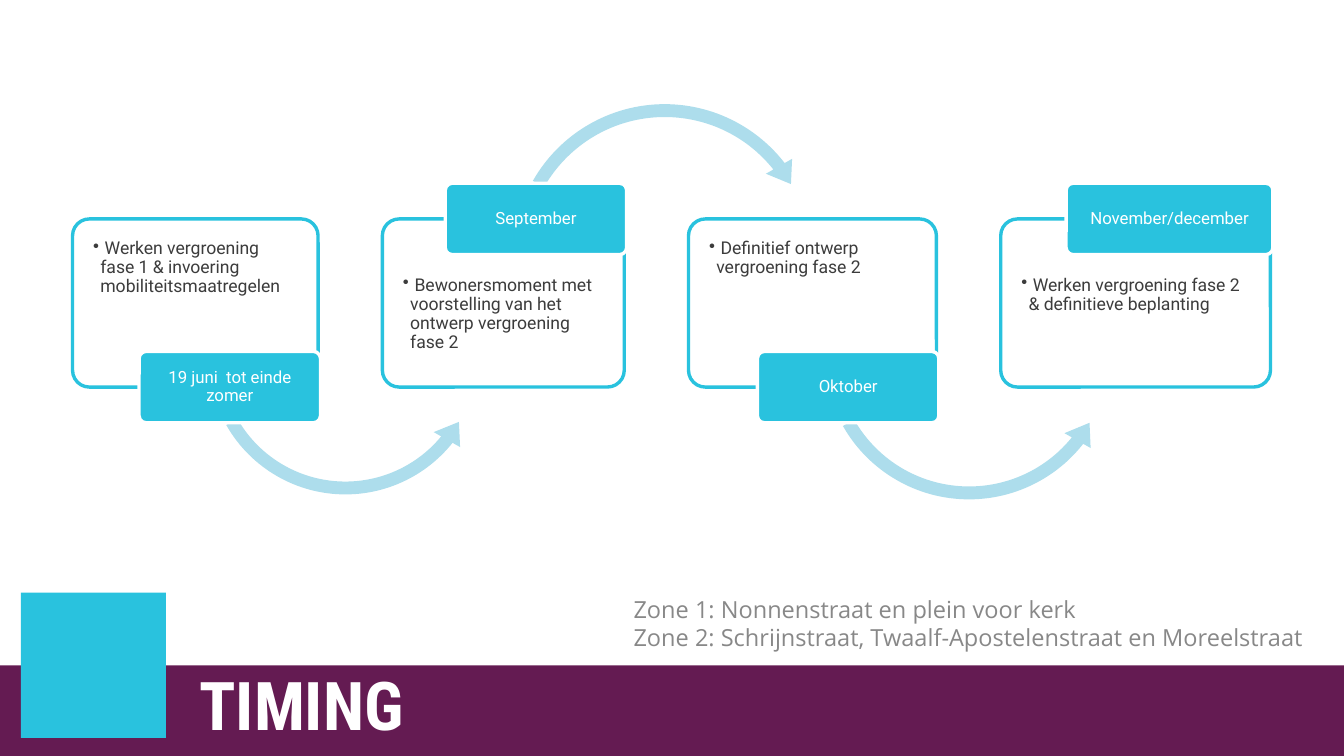
from dataclasses import dataclass
from typing import Optional

from lxml.etree import SubElement
from pptx import Presentation
from pptx.dml.color import RGBColor
from pptx.enum.shapes import MSO_SHAPE
from pptx.enum.text import MSO_ANCHOR, PP_ALIGN
from pptx.oxml.ns import qn
from pptx.shapes.autoshape import Shape
from pptx.text.text import TextFrame
from pptx.util import Emu, Inches, Pt

CYAN = RGBColor(0x29, 0xC2, 0xDE)
PALE_CYAN = RGBColor(0xAD, 0xDD, 0xEC)
PURPLE = RGBColor(0x64, 0x1B, 0x52)
WHITE = RGBColor(0xFF, 0xFF, 0xFF)
DARK_GREY = RGBColor(0x3C, 0x3C, 0x3C)
MID_GREY = RGBColor(0x88, 0x88, 0x88)

deck = Presentation()
deck.slide_width, deck.slide_height = Inches(11.11), Inches(6.25)
slide = deck.slides.add_slide(deck.slide_layouts[6])

# Grid: 100 columns by 100 rows
COLUMN = deck.slide_width / 100
ROW = deck.slide_height / 100
FIRST_CARD, CARD_GAP = 5.4, 4.78
CARD_TOP, CARD_HEIGHT = 28.96, 22.24
MONTH_HEIGHT, MONTH_OVERHANG = 9.44, 0.18
BAND_TOP, BAND_HEIGHT = 88, 12

BODY_FONT = {"name": "Roboto", "size": Pt(10.5)}
MONTH_FONT = {"name": "Roboto", "size": Pt(10)}
TITLE_FONT = {"name": "Roboto Condensed", "size": Pt(40), "bold": True}
ZONE_FONT = {"name": "Open Sans", "size": Pt(14)}


@dataclass
class Arrow:
    """Curved arrow, centred on a grid point; size in columns."""
    kind: MSO_SHAPE
    x: float
    y: float
    size: float
    bend: tuple[float, ...]


@dataclass
class Step:
    month: str
    task: str
    width: float
    month_width: float
    month_on_top: bool
    arrow: Optional[Arrow] = None


STEPS = [
    Step("19 juni  tot einde zomer",
         " Werken vergroening fase 1 & invoering mobiliteitsmaatregelen",
         18.27, 13.5, False,
         Arrow(MSO_SHAPE.LEFT_CIRCULAR_ARROW, 25.7, 47.28, 21.69,
               (0.044, 5.64, 23.4, 90.25, 0.052))),
    Step("September",
         " Bewonersmoment met voorstelling van het ontwerp vergroening fase 2",
         18, 13.5, True,
         Arrow(MSO_SHAPE.CIRCULAR_ARROW, 49.46, 33.84, 23.85,
               (0.04, 5.08, 193.17, 125.76, 0.047))),
    Step("Oktober", " Definitief ontwerp vergroening fase 2",
         18.45, 13.5, False,
         Arrow(MSO_SHAPE.LEFT_CIRCULAR_ARROW, 72.1, 46.88, 22.86,
               (0.042, 5.33, 23.08, 90.25, 0.049))),
    Step("November/december",
         " Werken vergroening fase 2 & definitieve beplanting",
         20.07, 15.39, True),
]


def grid_box(left: float, top: float, width: float, height: float) -> list[Emu]:
    return [Emu(round(length)) for length in
            (left * COLUMN, top * ROW, width * COLUMN, height * ROW)]


def add_block(kind: MSO_SHAPE, box: list[Emu], fill: RGBColor,
              outline: Optional[RGBColor] = None,
              adjustments: tuple[float, ...] = ()) -> Shape:
    block = slide.shapes.add_shape(kind, *box)
    block.shadow.inherit = False
    block.fill.solid()
    block.fill.fore_color.rgb = fill
    if outline is None:
        block.line.fill.background()
    else:
        block.line.color.rgb = outline
        block.line.width = Pt(2)
    for index, value in enumerate(adjustments):
        block.adjustments[index] = value
    return block


def write(frame: TextFrame, lines: list[str], font: dict, color: RGBColor,
          frame_format: dict, paragraph_format: dict) -> None:
    for name, value in {"word_wrap": True, **frame_format}.items():
        setattr(frame, name, value)
    for index, line in enumerate(lines):
        paragraph = frame.add_paragraph() if index else frame.paragraphs[0]
        for name, value in paragraph_format.items():
            setattr(paragraph, name, value)
        run = paragraph.add_run()
        run.text = line
        for name, value in font.items():
            setattr(run.font, name, value)
        run.font.color.rgb = color


def add_bullet(frame: TextFrame) -> None:
    properties = frame.paragraphs[0]._p.get_or_add_pPr()
    properties.set("marL", str(Inches(0.06)))
    properties.set("indent", str(-Inches(0.06)))
    SubElement(properties, qn("a:buChar")).set("char", "•")


def margins(side: float, top: float) -> dict:
    return {"margin_left": Inches(side), "margin_right": Inches(side),
            "margin_top": Inches(top), "margin_bottom": Inches(side)}


def add_step(step: Step, left: float) -> None:
    # Card with the task
    card = add_block(MSO_SHAPE.ROUNDED_RECTANGLE,
                     grid_box(left, CARD_TOP, step.width, CARD_HEIGHT),
                     WHITE, CYAN, (0.1,))
    write(card.text_frame, [step.task], BODY_FONT, DARK_GREY,
          {"vertical_anchor": MSO_ANCHOR.TOP,
           **margins(0.13, 0.43 if step.month_on_top else 0.13)},
          {"level": 1, "alignment": PP_ALIGN.LEFT, "line_spacing": 0.9})
    add_bullet(card.text_frame)

    # Arrow to the next step
    if step.arrow:
        arrow = step.arrow
        side = arrow.size * COLUMN
        corner = (arrow.x * COLUMN - side / 2, arrow.y * ROW - side / 2)
        add_block(arrow.kind, [Emu(round(n)) for n in (*corner, side, side)],
                  PALE_CYAN, adjustments=arrow.bend)

    # Month label, centred on the card's edge
    edge = CARD_TOP if step.month_on_top else CARD_TOP + CARD_HEIGHT
    month_left = left + step.width + MONTH_OVERHANG - step.month_width
    month = add_block(MSO_SHAPE.ROUNDED_RECTANGLE,
                      grid_box(month_left, edge - MONTH_HEIGHT / 2,
                               step.month_width, MONTH_HEIGHT),
                      CYAN, WHITE, (0.1,))
    write(month.text_frame, [step.month], MONTH_FONT, WHITE,
          {"vertical_anchor": MSO_ANCHOR.MIDDLE, **margins(0.02, 0.02)},
          {"alignment": PP_ALIGN.CENTER, "line_spacing": 0.9})


# Title band and plain emblem block
add_block(MSO_SHAPE.RECTANGLE, grid_box(0, BAND_TOP, 100, BAND_HEIGHT), PURPLE)
add_block(MSO_SHAPE.RECTANGLE, grid_box(1.55, 78.4, 10.8, 19.2), CYAN)

# Timeline
card_left = FIRST_CARD
for timeline_step in STEPS:
    add_step(timeline_step, card_left)
    card_left += timeline_step.width + CARD_GAP

# Title
title = slide.shapes.add_textbox(*grid_box(13.95, BAND_TOP, 84.5, BAND_HEIGHT))
write(title.text_frame, ["TIMING"], TITLE_FONT, WHITE,
      {"vertical_anchor": MSO_ANCHOR.MIDDLE}, {"line_spacing": Pt(40)})

# Zones
zones = slide.shapes.add_textbox(*grid_box(46.26, 77.92, 52.1, 9.12))
write(zones.text_frame,
      ["Zone 1: Nonnenstraat en plein voor kerk",
       "Zone 2: Schrijnstraat, Twaalf-Apostelenstraat en Moreelstraat"],
      ZONE_FONT, MID_GREY, {}, {})

deck.save("out.pptx")
